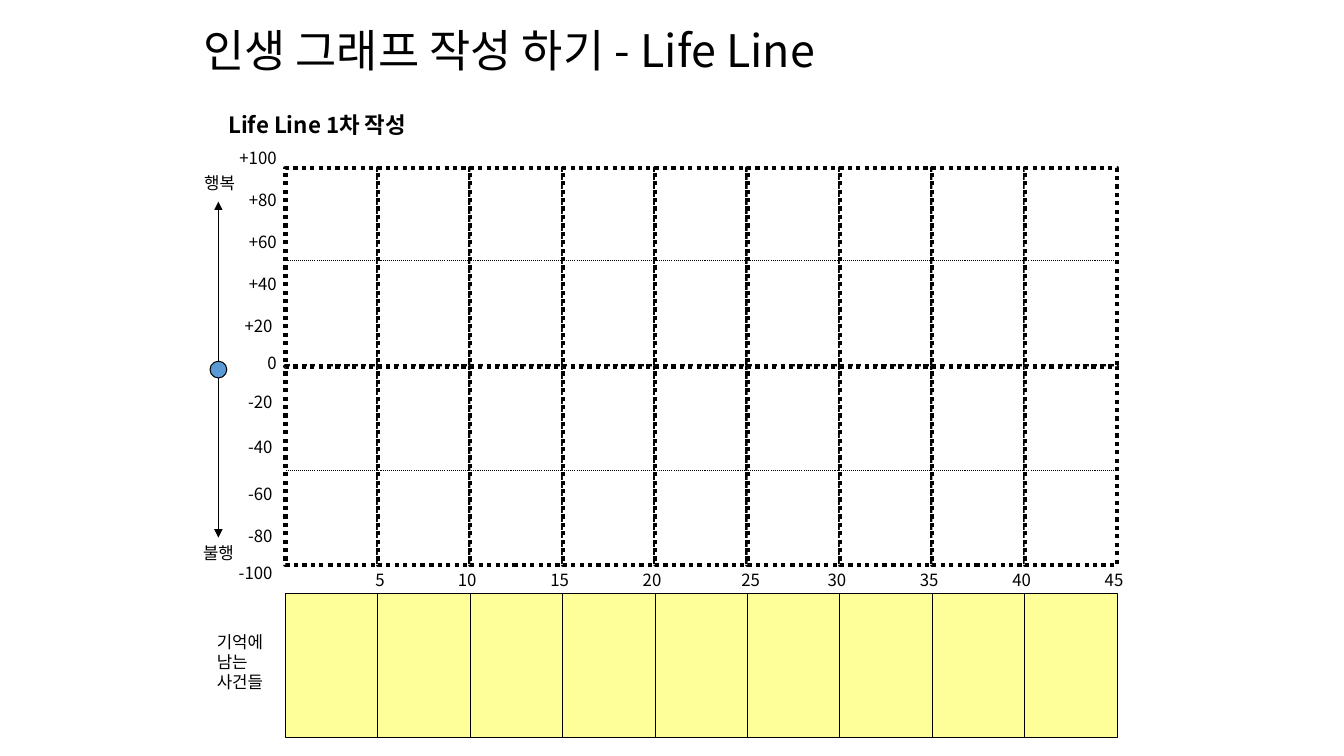
from lxml import etree
from pptx import Presentation
from pptx.dml.color import RGBColor
from pptx.enum.dml import MSO_LINE
from pptx.enum.shapes import MSO_CONNECTOR, MSO_SHAPE
from pptx.enum.text import MSO_ANCHOR, MSO_AUTO_SIZE as AutoSize, PP_ALIGN as Align
from pptx.oxml.ns import qn
from pptx.util import Pt

PX = 9525  # EMU per px, 96 px to the inch
FONT = "Noto Sans CJK KR"
BLACK = RGBColor(0x00, 0x00, 0x00)
WHITE = RGBColor(0xFF, 0xFF, 0xFF)
YELLOW = RGBColor(0xFF, 0xFF, 0x99)
BLUE = RGBColor(0x5B, 0x9B, 0xD5)

COLUMNS, COLUMN_W = 9, 88
YEARS_PER_COLUMN = 5
SCORE_TOPS = {"+100": 136, "+80": 176, "+60": 216, "+40": 256, "+20": 296, "0": 331,
              "-20": 368, "-40": 411, "-60": 456, "-80": 496, "-100": 531}


def px(*lengths):
    return [length * PX for length in lengths]


def write(frame, text, size=12, bold=False, align=Align.LEFT):
    for i, line in enumerate(text.split("\n")):
        paragraph = frame.paragraphs[0] if i == 0 else frame.add_paragraph()
        paragraph.alignment = align
        run = paragraph.add_run()
        run.text = line
        font = run.font
        font.size, font.bold, font.name = Pt(size), bold, FONT
        font.color.rgb = BLACK
        etree.SubElement(font._element, qn("a:ea")).set("typeface", FONT)


def label(slide, box, text, wrap=False, **text_format):
    frame = slide.shapes.add_textbox(*px(*box)).text_frame
    frame.word_wrap = wrap
    frame.auto_size = AutoSize.SHAPE_TO_FIT_TEXT
    write(frame, text, **text_format)


def outline(line, width, dash=None):
    line.color.rgb = BLACK
    line.width = Pt(width)
    if dash:
        line.dash_style = dash


def figure(slide, kind, box, fill, width=0.75, dash=None):
    shape = slide.shapes.add_shape(kind, *px(*box))
    shape.shadow.inherit = False
    shape.fill.solid()
    shape.fill.fore_color.rgb = fill
    outline(shape.line, width, dash)


def rule(slide, ends, dash=None, arrows=False):
    connector = slide.shapes.add_connector(MSO_CONNECTOR.STRAIGHT, *px(*ends))
    outline(connector.line, 0.75, dash)
    if arrows:
        for end in ("a:headEnd", "a:tailEnd"):
            etree.SubElement(connector.line._ln, qn(end)).set("type", "triangle")
    etree.SubElement(connector._element.spPr, qn("a:effectLst"))


def heading(slide, box):
    title = slide.shapes.title
    title.left, title.top, title.width, title.height = px(*box)
    frame = title.text_frame
    frame.word_wrap = True
    frame.auto_size = AutoSize.NONE
    frame.vertical_anchor = MSO_ANCHOR.MIDDLE
    write(frame, "인생 그래프 작성 하기 - Life Line", size=32)


def cell_row(slide, box, fill, **line_format):
    left, top, width, height = box
    for column in range(COLUMNS):
        cell = (left + column * width, top, width, height)
        figure(slide, MSO_SHAPE.RECTANGLE, cell, fill, **line_format)


def life_grid(slide, box):
    left, top, width, height = box
    half = height // 2
    for row in range(2):
        cell_row(slide, (left, top + row * half, COLUMN_W, half), WHITE,
                 width=3, dash=MSO_LINE.ROUND_DOT)
    for y in (top + 88, top + 288):
        rule(slide, (left, y, left + width, y), dash=MSO_LINE.ROUND_DOT)

    # Ages below the grid, each near its column's right edge
    nudges = {5: 2, 25: 3}
    for column in range(1, COLUMNS + 1):
        age = column * YEARS_PER_COLUMN
        center = left + column * COLUMN_W + nudges.get(age, -3)
        label(slide, (center - 19, top + height, 38, 29), str(age), align=Align.CENTER)


def score_axis(slide, box):
    left, top, width, height = box
    # Scores, right-aligned beside the grid
    for score, y in SCORE_TOPS.items():
        right = left + width - (4 if score == "+20" or score[0] == "-" else 0)
        label(slide, (right - 60, y, 60, 29), score, wrap=True, align=Align.RIGHT)

    # Happiness arrow with its midpoint
    label(slide, (left + 1, top, 52, 29), "행복")
    label(slide, (left, top + height - 29, 52, 29), "불행")
    x = left + 24
    rule(slide, (x, top + 32, x, top + height - 29), arrows=True)
    figure(slide, MSO_SHAPE.OVAL, (x - 8, top + 184, 16, 16), BLUE)


def memorable_events(slide, box):
    left, top, width, height = box
    cell_row(slide, (left, top, COLUMN_W, height), YELLOW)
    label(slide, (left - 75, top + 32, 68, 68), "기억에\n남는\n사건들")


def life_line_slide(prs):
    slide = prs.slides.add_slide(prs.slide_layouts[5])
    grid_left, grid_w = 272, COLUMNS * COLUMN_W
    heading(slide, (184, 11, 911, 73))
    label(slide, (208, 101, 198, 36), "Life Line 1차 작성", size=16, bold=True)
    life_grid(slide, (grid_left, 160, grid_w, 378))
    score_axis(slide, (184, 160, 89, 381))
    memorable_events(slide, (grid_left, 565, grid_w, 137))


def main():
    prs = Presentation()
    prs.slide_width, prs.slide_height = px(1280, 720)
    life_line_slide(prs)
    prs.save("out.pptx")


if __name__ == "__main__":
    main()
